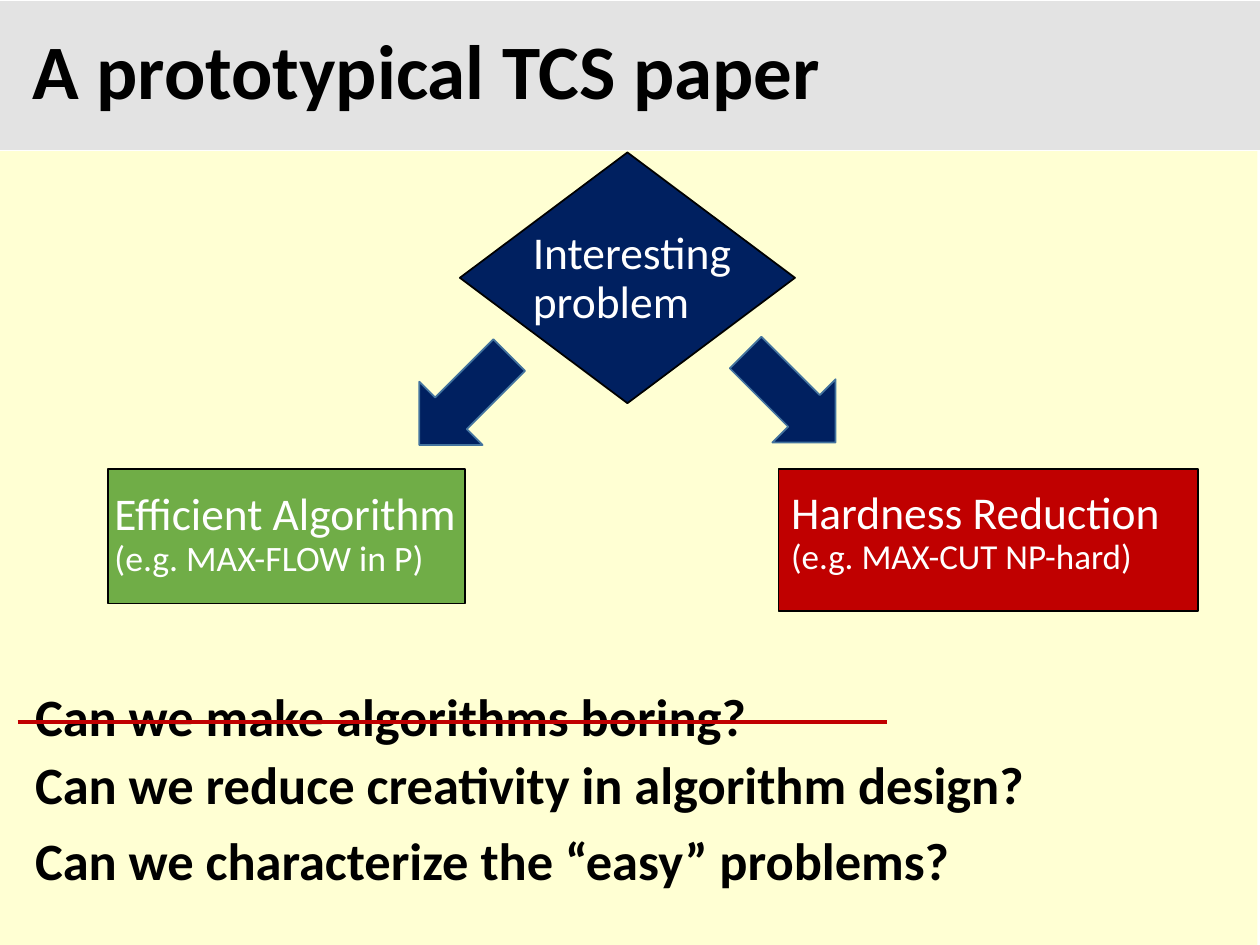
from dataclasses import dataclass

from lxml import etree
from pptx import Presentation
from pptx.dml.color import RGBColor
from pptx.enum.shapes import MSO_CONNECTOR, MSO_SHAPE
from pptx.enum.text import MSO_ANCHOR
from pptx.oxml.ns import qn
from pptx.util import Inches, Pt

RECT, DIAMOND, DOWN = MSO_SHAPE.RECTANGLE, MSO_SHAPE.DIAMOND, MSO_SHAPE.DOWN_ARROW
TOP, MIDDLE = MSO_ANCHOR.TOP, MSO_ANCHOR.MIDDLE
STRAIGHT = MSO_CONNECTOR.STRAIGHT


@dataclass(frozen=True)
class Theme:
    font: str = "Calibri"
    black: RGBColor = RGBColor(0, 0, 0)
    white: RGBColor = RGBColor(255, 255, 255)
    gray: RGBColor = RGBColor.from_string("BFBFBF")
    yellow: RGBColor = RGBColor.from_string("FFFF99")
    navy: RGBColor = RGBColor.from_string("002060")
    blue: RGBColor = RGBColor.from_string("43739E")
    green: RGBColor = RGBColor.from_string("70AD47")
    red: RGBColor = RGBColor.from_string("C00000")
    title: float = 44
    question: float = 30
    label: float = 26
    detail: float = 20


T = Theme()


def add_block(kind, x, y, w, h, fill, line=None, rotation=0):
    sp = s.shapes.add_shape(kind, Inches(x), Inches(y), Inches(w), Inches(h))
    sp.shadow.inherit = False
    sp.rotation = rotation
    sp.fill.solid()
    sp.fill.fore_color.rgb = fill
    if line is None:
        sp.line.fill.background()
    else:
        sp.line.color.rgb = line
        sp.line.width = Pt(1)
    return sp


def add_text(text, x, y, w, h, sizes, color, bold=False, before=10, anchor=TOP):
    sp = s.shapes.add_textbox(Inches(x), Inches(y), Inches(w), Inches(h))
    tf = sp.text_frame
    tf.word_wrap = True
    tf.vertical_anchor = anchor
    p = tf.paragraphs[0]
    p.text = text
    p.line_spacing = 0.9
    p.space_before = Pt(before)
    for r, size in zip(p.runs, sizes):
        r.font.name = T.font
        r.font.size = Pt(size)
        r.font.bold = bold
        r.font.color.rgb = color


prs = Presentation()
prs.slide_width, prs.slide_height = Inches(10), Inches(7.5)
s = prs.slides.add_slide(prs.slide_layouts[6])

# Translucent header and body bands
for y, w, h, color in [(0.01, 10, 1.18, T.gray), (1.2, 9.98, 6.44, T.yellow)]:
    sp = add_block(RECT, 0, y, w, h, color)
    clr = sp.fill._xPr.find(qn("a:solidFill"))[0]
    etree.SubElement(clr, qn("a:alpha"), val="43000")

# Title
add_text("A prototypical TCS paper", 0.16, 0, 9.84, 1.19, [T.title], T.black,
         bold=True, before=0, anchor=MIDDLE)

# Problem diamond and the two arrows leaving it
add_block(DIAMOND, 3.65, 1.21, 2.66, 1.99, T.navy, T.black)
add_text("Interesting problem", 4.13, 1.78, 1.89, 0.94, [T.label], T.white)
for x, y, rotation in [(3.33, 2.67, 45), (5.92, 2.65, 315)]:
    add_block(DOWN, x, y, 0.71, 1.01, T.navy, T.blue, rotation)

# Outcome boxes
add_block(RECT, 0.86, 3.72, 2.83, 1.07, T.green, T.black)
add_text("Efficient Algorithm\v(e.g. MAX-FLOW in P)", 0.81, 3.85, 2.98, 1.31,
         [25.9, 20.4], T.white)
add_block(RECT, 6.18, 3.72, 3.33, 1.13, T.red, T.black)
add_text("Hardness Reduction\v(e.g. MAX-CUT NP-hard)", 6.18, 3.84, 3.56, 1.16,
         [T.label, T.detail], T.white)

# Questions
questions = [
    ("Can we make algorithms boring?", 5.44),
    ("Can we reduce creativity in algorithm design?", 5.98),
    ("Can we characterize the “easy” problems?", 6.58),
]
for text, y in questions:
    add_text(text, 0.18, y, 9.7, 0.66, [T.question], T.black, bold=True)

# Strike through the first question
line = s.shapes.add_connector(STRAIGHT, Inches(0.14), Inches(5.73), Inches(7.04), Inches(5.73))
line.line.color.rgb = T.red
line.line.width = Pt(2.5)
etree.SubElement(line._element.spPr, qn("a:effectLst"))

prs.save("out.pptx")
